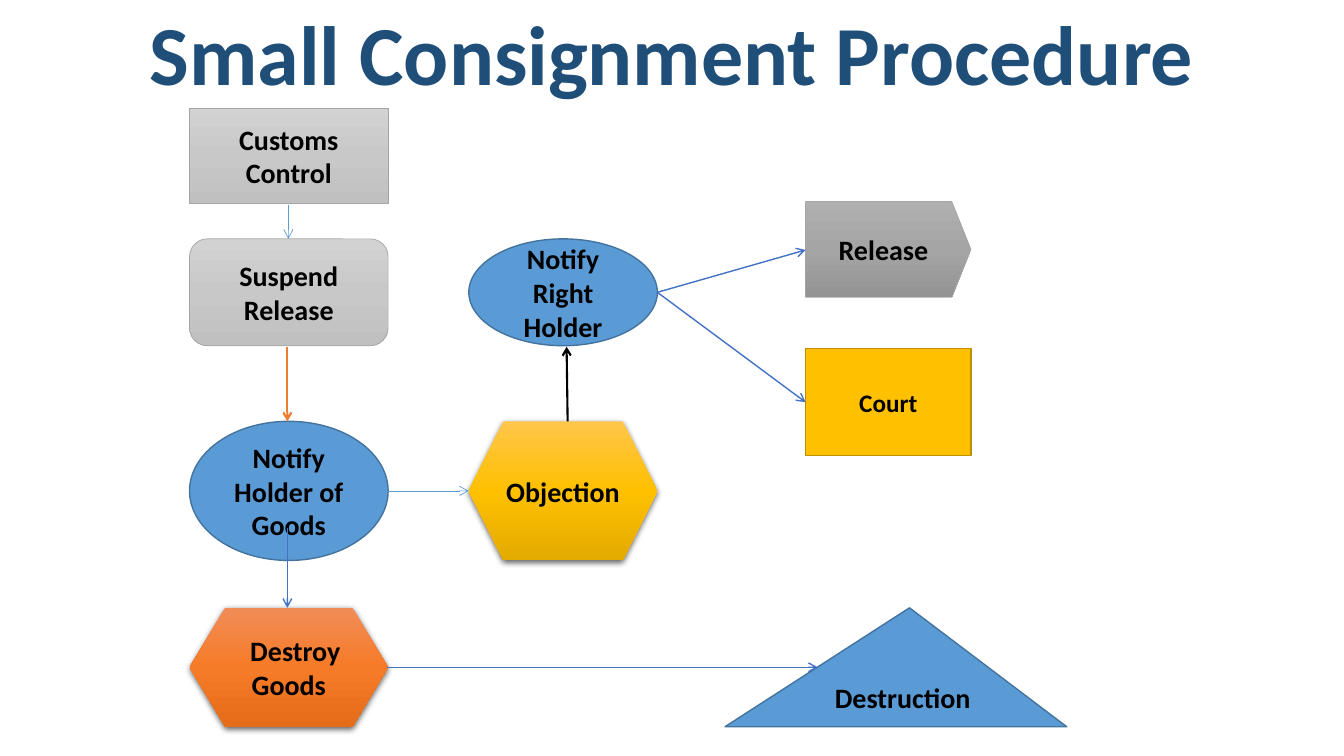
"""Build the small consignment procedure flowchart slide."""
from copy import deepcopy

from pptx import Presentation
from pptx.dml.color import RGBColor as RGB
from pptx.enum.shapes import MSO_CONNECTOR as Link, MSO_SHAPE as Form
from pptx.enum.text import MSO_ANCHOR as Anchor, PP_ALIGN as Align
from pptx.oxml import parse_xml
from pptx.oxml.ns import nsdecls, qn
from pptx.util import Inches, Pt

theme = {
    "font": "Calibri",
    "title": 60, "body": 20, "small": 18,
    "ink": "000000", "navy": "1F4E79",
    "sky": "5B9BD5", "rim": "43739E", "blue": "4472C4",
    "rust": "ED7D31", "gold": "FFC000", "bronze": "BD8E00", "grey": "A5A5A5",
    "pale": ("D2D2D2", "C8C8C8", "C0C0C0"),
    "steel": ("AFAFAF", "A5A5A5", "939393"),
    "flame": ("F18C57", "F67B28", "E56C19"),
    "amber": ("FFC64B", "FFC000", "E3AB00"),
}
SHADOW = (
    f'<a:outerShdw {nsdecls("a")} blurRad="57150" dist="19050" dir="5400000" '
    'algn="ctr" rotWithShape="0"><a:srgbClr val="000000">'
    '<a:alpha val="63000"/></a:srgbClr></a:outerShdw>'
)


def write(frame, text, size, color, **form):
    """Fill a text frame with centred bold paragraphs."""
    for name, value in {"word_wrap": True, **form}.items():
        setattr(frame, name, value)
    frame.text = text
    for para in frame.paragraphs:
        para.alignment = Align.CENTER
        font = para.runs[0].font
        look = {"name": theme["font"], "size": Pt(theme[size]), "bold": True}
        for name, value in look.items():
            setattr(font, name, value)
        font.color.rgb = RGB.from_string(theme[color])


def paint(shape, tone):
    """Give a shape a plain fill or a three-stop vertical gradient."""
    fill = shape.fill
    if isinstance(tone, str):
        fill.solid()
        fill.fore_color.rgb = RGB.from_string(tone)
        return
    fill.gradient()
    fill.gradient_angle = 270
    stops = shape._element.spPr.find(qn("a:gradFill")).find(qn("a:gsLst"))
    stops.insert(1, deepcopy(stops[0]))
    for stop, shade, place in zip(fill.gradient_stops, tone, (0, 0.5, 1)):
        stop.position = place
        stop.color.rgb = RGB.from_string(shade)


deck = Presentation()
deck.slide_width, deck.slide_height = Inches(13.33), Inches(7.5)
slide = deck.slides.add_slide(deck.slide_layouts[6])
shapes = slide.shapes

first, second, third, wide = (1.88, 1.97), (4.65, 1.87), (7.99, 1.64), (7.19, 3.39)
notice, choice, finish = (2.37, 1.06), (4.18, 1.38), (6.03, 1.18)

steps = [
    ("Customs Control", Form.RECTANGLE, first, (1.07, 0.95), "pale", "grey", 0.5, None),
    ("Suspend Release", Form.ROUNDED_RECTANGLE, first, notice, "pale", "grey", 0.5, None),
    ("Notify Holder of Goods", Form.OVAL, first, choice, "sky", "rim", 1, None),
    ("Notify Right Holder", Form.OVAL, second, notice, "sky", "rim", 1, None),
    ("Destroy\nGoods", Form.HEXAGON, first, finish, "flame", None, 0, 0.3),
    ("Destruction", Form.ISOSCELES_TRIANGLE, wide, finish, "sky", "rim", 1, 0.54),
    ("Objection", Form.HEXAGON, second, choice, "amber", None, 0, None),
    ("Court", Form.RECTANGLE, third, (3.46, 1.06), "gold", "bronze", 1, None),
    ("Release", Form.PENTAGON, third, (2, 0.95), "steel", "grey", 0.5, 0.2),
]
for text, form, (left, width), (top, height), tone, edge, weight, bend in steps:
    step = shapes.add_shape(form, *map(Inches, (left, top, width, height)))
    step.shadow.inherit = False
    paint(step, theme[tone])
    if bend:
        step.adjustments[0] = bend
    if edge:
        step.line.color.rgb = RGB.from_string(theme[edge])
        step.line.width = Pt(weight)
    else:
        step.line.fill.background()
        step._element.spPr.find(qn("a:effectLst")).append(parse_xml(SHADOW))
    size = "small" if text == "Court" else "body"
    write(step.text_frame, text, size, "ink", vertical_anchor=Anchor.MIDDLE)
    if text.startswith("Destroy"):
        lead = step.text_frame.paragraphs[0]
        lead._p.get_or_add_pPr().set("marL", str(Inches(0.13)))

arrows = [
    ((2.86, 2.03), (2.86, 2.37), "sky", 0.5),
    ((2.85, 3.44), (2.85, 4.18), "rust", 1.5),
    ((2.85, 5.24), (2.85, 6.03), "blue", 1),
    ((3.84, 6.62), (8.11, 6.62), "blue", 1),
    ((3.84, 4.87), (4.65, 4.87), "sky", 0.5),
    ((5.63, 4.18), (5.62, 3.44), "ink", 1.5),
    ((6.52, 2.9), (7.99, 3.99), "blue", 1),
    ((6.52, 2.9), (7.99, 2.48), "blue", 1),
]
for start, end, tone, weight in arrows:
    arrow = shapes.add_connector(Link.STRAIGHT, *map(Inches, start + end))
    arrow.line.color.rgb = RGB.from_string(theme[tone])
    arrow.line.width = Pt(weight)
    arrow.line._get_or_add_ln().append(
        parse_xml(f'<a:tailEnd {nsdecls("a")} type="arrow"/>'))
    arrow._element.spPr.append(parse_xml(f'<a:effectLst {nsdecls("a")}/>'))

title = shapes.add_textbox(*map(Inches, (0, 0.21, 13.33, 0.87)))
write(title.text_frame, "Small Consignment Procedure", "title", "navy",
      vertical_anchor=Anchor.BOTTOM)
title.text_frame.paragraphs[0].line_spacing = 0.9

deck.save("out.pptx")
